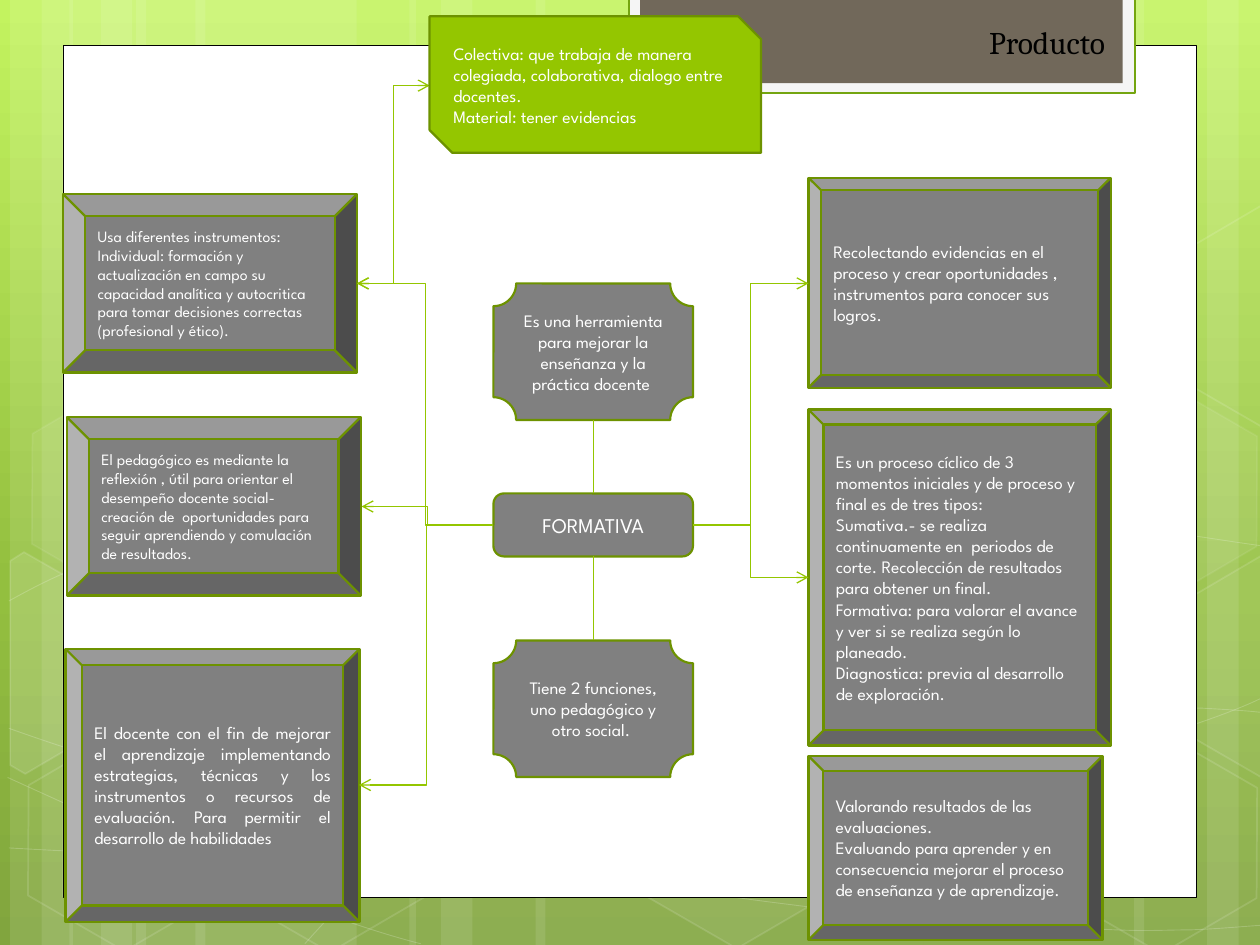
import copy
import math
import pptx
import pptx.util
import pptx.dml.color
import pptx.enum.shapes
import pptx.enum.text
import pptx.oxml
import pptx.oxml.ns

KIND = pptx.enum.shapes.MSO_SHAPE
LINK = pptx.enum.shapes.MSO_CONNECTOR
ALIGN = pptx.enum.text.PP_ALIGN
ANCHOR = pptx.enum.text.MSO_ANCHOR
Pt = pptx.util.Pt
qn = pptx.oxml.ns.qn
NS = pptx.oxml.ns.nsdecls("a")
GREY, LIME, EDGE, WHITE = "808080", "94C600", "6D9200", "FFFFFF"


def cm(units):
    """Grid units are 2.54 cm wide."""
    return pptx.util.Cm(units * 2.54)


def rgb(code):
    return pptx.dml.color.RGBColor.from_string(code)


def paint(fill, code, alpha=100):
    if code is None:
        fill.background()
        return
    fill.solid()
    fill.fore_color.rgb = rgb(code)
    if alpha < 100:
        tone = fill._xPr.find(qn("a:solidFill"))[0]
        tone.append(pptx.oxml.parse_xml(f'<a:alpha {NS} val="{alpha * 1000}"/>'))


def style(shape, fill, line, width=1, fade=100, dim=100):
    shape.shadow.inherit = False
    paint(shape.fill, fill, fade)
    if line:
        shape.line.width = Pt(width)
    paint(shape.line.fill, line, dim)
    return shape


def draw(page, kind, box, fill, line=None, width=1.25, adj=None, **look):
    shape = page.shapes.add_shape(kind, *map(cm, box))
    if adj is not None:
        shape.adjustments[0] = adj
    return style(shape, fill, line, width, **look)


def write(shape, texts, size=10, align=ALIGN.LEFT, face="League Spartan",
          code=WHITE, anchor=ANCHOR.MIDDLE):
    frame = shape.text_frame
    frame.word_wrap = True
    frame.vertical_anchor = anchor
    for num, text in enumerate(texts):
        para = frame.add_paragraph() if num else frame.paragraphs[0]
        para.alignment = align
        run = para.add_run()
        run.text = text
        for key, val in {"size": Pt(size), "name": face}.items():
            setattr(run.font, key, val)
        run.font.color.rgb = rgb(code)


def link(page, kind, start, end, tips=()):
    line = page.shapes.add_connector(kind, *map(cm, start + end))
    line.line.width = Pt(0.75)
    paint(line.line.fill, LIME)
    for tip in tips:
        line.line._ln.append(pptx.oxml.parse_xml(f'<a:{tip} {NS} type="arrow"/>'))
    line._element.spPr.append(pptx.oxml.parse_xml(f"<a:effectLst {NS}/>"))
    return line


def trace(page, dots, close, **look):
    pen = page.shapes.build_freeform(*map(cm, dots[0]), scale=1.0)
    pen.add_line_segments([tuple(map(cm, dot)) for dot in dots[1:]], close=close)
    return style(pen.convert_to_shape(), **look)


def curve(shape):
    """Turn every three segments into one cubic curve."""
    legs = shape._element.xpath(".//a:lnTo")
    for first, second, third in zip(legs[::3], legs[1::3], legs[2::3]):
        first.tag = qn("a:cubicBezTo")
        for leg in (second, third):
            first.append(leg[0])
            leg.getparent().remove(leg)


def turn(dot, mid, angle):
    x, y = dot[0] - mid[0], dot[1] - mid[1]
    cos, sin = math.cos(math.radians(angle)), math.sin(math.radians(angle))
    return mid[0] + x * cos - y * sin, mid[1] + x * sin + y * cos


def backdrop(slide, box):
    left, top, wide, high = box
    # Green gradient
    fill = slide.background.fill
    fill.gradient()
    fill.gradient_angle = 270
    stops = slide._element.xpath(".//p:bg//a:gsLst")[0]
    stops.insert(1, copy.deepcopy(stops[0]))
    for stop, (pos, code) in zip(fill.gradient_stops,
                                 [(0, "C3F35F"), (0.62, "93BF3F"), (1, "81A53E")]):
        stop.position = pos
        stop.color.rgb = rgb(code)
    group = slide.shapes.add_group_shape()
    # Pale stripes
    for x, w, angle in [(1.08, 1.75, 0), (0.08, 0.5, 0), (0.33, 0.83, 0), (1.55, 1.75, 0),
                        (0.55, 0.5, 0), (0.8, 0.83, 0), (7.33, 1.75, 180), (9.58, 0.5, 180),
                        (9, 0.83, 180), (4.25, 3.08, 0), (3.25, 0.5, 0), (3.5, 0.83, 0)]:
        bar = draw(group, KIND.RECTANGLE, (left + x, top, w, high), WHITE, fade=10)
        bar.rotation = angle
    # Thin waves
    for nodes in [
        [(0.07, 6.73), (0.61, 6.76), (1.15, 6.79), (1.9, 6.78), (2.65, 6.77), (3.58, 6.75),
         (4.58, 6.65), (5.58, 6.55), (7, 6.36), (7.92, 6.17), (8.83, 5.98), (9.77, 5.68),
         (10.07, 5.51)],
        [(0.07, 4.77), (0.36, 4.61), (0.65, 4.46), (1.21, 4.31), (1.78, 4.16), (2.59, 3.94),
         (3.47, 3.87), (4.36, 3.8), (5.44, 3.79), (6.54, 3.87), (7.64, 3.95), (9.47, 4.26),
         (10.07, 4.34)],
        [(0.06, 6.17), (1.27, 6.72), (2.47, 7.27), (3.34, 7.49)],
        [(0.07, 5.78), (0.38, 5.89), (0.7, 6), (1.28, 6.16), (1.86, 6.31), (2.73, 6.56),
         (3.57, 6.73), (4.4, 6.9), (5.45, 7.08), (6.28, 7.18), (7.11, 7.29), (8, 7.33),
         (8.53, 7.36), (9.05, 7.4), (9.19, 7.38), (9.45, 7.38), (9.71, 7.37), (9.89, 7.35),
         (10.07, 7.34)],
        [(2.42, 7.49), (2.6, 7.29), (2.78, 7.09), (3.02, 6.91), (3.26, 6.73), (3.6, 6.53),
         (3.88, 6.39), (4.16, 6.25), (4.33, 6.19), (4.7, 6.09), (5.06, 5.99), (5.73, 5.85),
         (6.08, 5.78), (6.44, 5.71), (6.49, 5.71), (6.8, 5.69), (7.11, 5.66), (7.6, 5.63),
         (7.94, 5.62), (8.29, 5.61), (8.86, 5.62), (8.86, 5.62), (9.08, 5.62), (9.31, 5.62),
         (9.53, 5.62), (9.71, 5.63), (9.88, 5.64), (9.97, 5.65), (10.06, 5.66),
         (10.03, 5.65), (10.06, 5.66)],
    ]:
        dots = [(left + x, top + y) for x, y in nodes]
        curve(trace(group, dots, False, fill=None, line=WHITE, width=0.5, dim=20))
    # Hexagons
    for x, y, fade, dim in [(3.34, 0.36, 4, 8), (4.97, 5.89, 6, 12), (0.11, 5.91, 0, 12),
                            (0.14, 3.12, 7, 8), (1.74, 5.92, 0, 12), (7.53, 4.53, 10, 12),
                            (8.34, 5.93, 0, 12), (8.34, 3.14, 7, 8)]:
        cell = draw(group, KIND.HEXAGON, (left + x, top + y, 1.75, 1.52),
                    WHITE if fade else None, WHITE, 1, 0.285, fade=fade, dim=dim)
        cell.rotation = 30
    # Hexagons cut by the slide's sides, turned about their middles
    east = [(0, 0.44), (0.75, 0), (0.83, 0.05), (0.83, 1.72), (0.76, 1.76), (0, 1.32)]
    west = [(0, 0.07), (0.11, 0), (0.88, 0.44), (0.87, 1.32), (0.12, 1.76), (0, 1.69)]
    for x, y, dots, mid, fade in [(0.08, 4.38, west, (0.36, 5.35), 10),
                                  (9.26, 4.41, east, (9.85, 5.2), 4),
                                  (9.26, 1.63, east, (9.85, 2.41), 0)]:
        dots = [turn((left + x + p, top + y + q), mid, -30) for p, q in dots]
        cell = trace(group, dots, True, fill=WHITE if fade else None, line=WHITE,
                     fade=fade, dim=12)
        cell.rotation = 30
    # White sheet
    draw(slide, KIND.RECTANGLE, (left + 0.5, top + 0.36, 9, 6.76), WHITE, "000000", 0.5)


def header(slide, box):
    left, top, wide, high = box
    draw(slide, KIND.RECTANGLE, box, "F5F5F5", "74A510")
    draw(slide, KIND.RECTANGLE, (left + 0.09, top, wide - 0.19, high - 0.08), "71685A")
    title = slide.shapes.title
    spot = (left + 2.76, top + 0.15, 1.67, 0.4)
    for key, val in zip(("left", "top", "width", "height"), spot):
        setattr(title, key, cm(val))
    write(title, ["Producto"], 18, face="Cambria", code="000000", anchor=ANCHOR.TOP)


def centre(slide, box):
    left, top, wide, high = box
    parts = []
    for kind, y, h, size, text in [
        (KIND.PLAQUE, 0, 13 / 12, 10,
         "Es una herramienta para mejorar la enseñanza y la práctica docente "),
        (KIND.ROUNDED_RECTANGLE, 20 / 12, 0.5, 12, "FORMATIVA"),
        (KIND.PLAQUE, 34 / 12, 13 / 12, 10,
         "Tiene 2 funciones, uno pedagógico y otro social. "),
    ]:
        part = draw(slide, kind, (left, top + y, wide, h), GREY, EDGE)
        write(part, [text], size, ALIGN.CENTER)
        parts.append(part)
    for upper, lower in zip(parts, parts[1:]):
        line = link(slide, LINK.STRAIGHT, (0, 0), (1, 1))
        line.begin_connect(upper, 2)
        line.end_connect(lower, 0)


def column(slide, box, cards):
    left, top = box[:2]
    for x, y, w, h, adj, size, align, texts in cards:
        card = draw(slide, KIND.BEVEL, (left + x, top + y, w, h), GREY, EDGE, adj=adj)
        write(card, texts, size, align)


def branch(slide, start, ends):
    for end in ends:
        link(slide, LINK.ELBOW, start, end, ["tailEnd"])


def note(slide, box):
    part = draw(slide, KIND.SNIP_2_DIAG_RECTANGLE, box, LIME, EDGE)
    write(part, ["Colectiva: que trabaja de manera colegiada, colaborativa, dialogo entre docentes.",
                 "Material: tener evidencias"])


LEFT = [
    (0, 0, 28 / 12, 17 / 12, 0.125, 9, ALIGN.LEFT,
     ["Usa diferentes instrumentos:",
      "Individual: formación y actualización en campo su capacidad analítica y autocritica "
      "para tomar decisiones correctas (profesional y ético)."]),
    (0.03, 1.77, 28 / 12, 17 / 12, 0.125, 9, ALIGN.LEFT,
     ["El pedagógico es mediante la reflexión , útil para orientar el desempeño docente "
      "social-creación de  oportunidades para seguir aprendiendo y comulación de resultados."]),
    (0.02, 3.61, 28 / 12, 26 / 12, 0.06, 10, ALIGN.JUSTIFY,
     ["El docente con el fin de mejorar el aprendizaje implementando estrategias, técnicas y "
      "los instrumentos o recursos de evaluación. Para permitir el desarrollo de habilidades"]),
]
RIGHT = [
    (0, 4.59, 28 / 12, 1.46, 0.08, 10, ALIGN.LEFT,
     ["Valorando resultados de las evaluaciones.",
      "Evaluando para aprender y en consecuencia mejorar el proceso de enseñanza y de aprendizaje."]),
    (0, 1.84, 2.4, 32 / 12, 0.05, 10, ALIGN.LEFT,
     ["Es un proceso cíclico de 3 momentos iniciales y de proceso y final es de tres tipos:",
      "Sumativa.- se realiza continuamente en  periodos de corte. Recolección de resultados "
      "para obtener un final.",
      "Formativa: para valorar el avance y ver si se realiza según lo planeado.",
      "Diagnostica: previa al desarrollo de exploración."]),
    (0, 0, 2.4, 20 / 12, 0.06, 10, ALIGN.LEFT,
     ["Recolectando evidencias en el proceso y crear oportunidades , instrumentos para "
      "conocer sus logros."]),
]


def main():
    deck = pptx.Presentation()
    deck.slide_width, deck.slide_height = cm(10), cm(7.5)
    slide = deck.slides.add_slide(deck.slide_layouts[5])
    backdrop(slide, (0, 0, 10, 7.5))
    header(slide, (4.99, -0.02, 4.02, 0.76))
    centre(slide, (47 / 12, 2.25, 19 / 12, 47 / 12))
    column(slide, (0.5, 1.54, 2.36, 5.78), LEFT)
    branch(slide, (47 / 12, 50 / 12), [(34 / 12, 2.25), (2.87, 4.02), (2.85, 6.23)])
    link(slide, LINK.ELBOW, (34 / 12, 2.25), (3.41, 0.68), ["headEnd", "tailEnd"])
    note(slide, (3.41, 0.13, 2.63, 13 / 12))
    column(slide, (77 / 12, 1.41, 2.4, 6.05), RIGHT)
    branch(slide, (5.5, 50 / 12), [(77 / 12, 2.25), (77 / 12, 55 / 12)])
    # Title in front
    slide.shapes._spTree.append(slide.shapes.title._element)
    deck.save("out.pptx")


if __name__ == "__main__":
    main()
